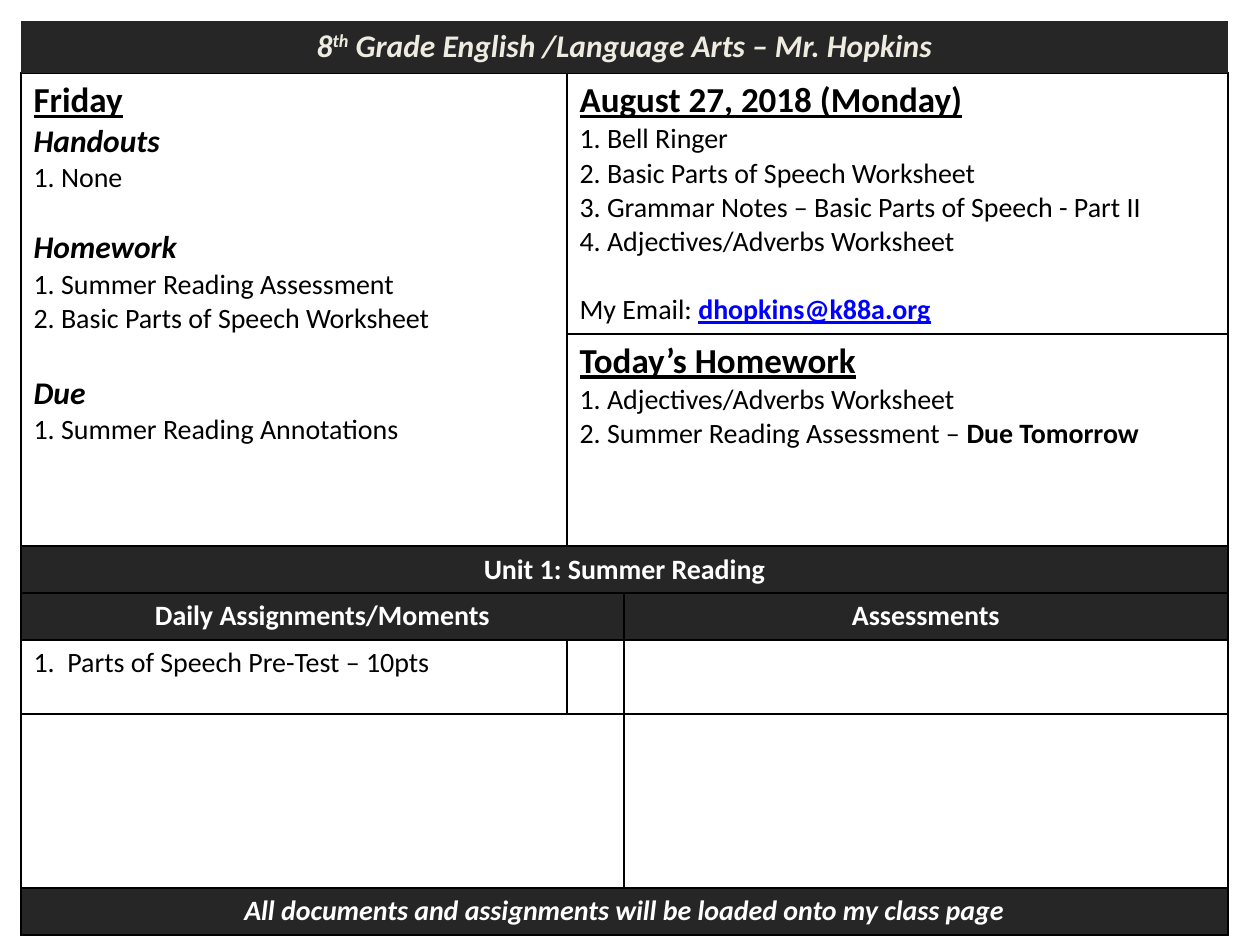
"""Build a class agenda slide from three stacked tables."""
import pptx
import pptx.dml.color
import pptx.enum.text
import pptx.oxml
import pptx.oxml.ns
import pptx.util

PIXEL = 914400 / 126
LEFT = 21

THEME = {
    "font": "Calibri",
    "colors": {"ink": "000000", "band": "262626", "cream": "EEECE1", "white": "FFFFFF", "link": "0000FF"},
    "styles": {
        "title": {"size": 18, "color": "cream", "bold": True, "italic": True, "centered": True},
        "heading": {"size": 20, "bold": True, "underline": True},
        "subheading": {"size": 18, "bold": True, "italic": True},
        "item": {"size": 16},
        "strong": {"size": 16, "bold": True},
        "link": {"size": 16, "color": "link", "bold": True, "underline": True},
        "band": {"size": 16, "color": "white", "bold": True, "centered": True},
        "footer": {"size": 16, "color": "white", "bold": True, "italic": True, "centered": True},
        "superscript": {"size": 18, "color": "cream", "bold": True, "italic": True, "baseline": 30000},
    },
}

FRIDAY = [
    ("heading", "Friday"),
    ("subheading", "Handouts"),
    ("item", "1. None"),
    ("subheading", "Homework", 19.5),
    ("item", "1. Summer Reading Assessment"),
    ("item", "2. Basic Parts of Speech Worksheet"),
    ("subheading", "Due", 22),
    ("item", "1. Summer Reading Annotations"),
]
MONDAY = [
    ("heading", "August 27, 2018 (Monday)"),
    ("item", "1. Bell Ringer"),
    ("item", "2. Basic Parts of Speech Worksheet"),
    ("item", "3. Grammar Notes – Basic Parts of Speech - Part II"),
    ("item", "4. Adjectives/Adverbs Worksheet"),
    ("item", [("item", "My Email: "), ("link", "dhopkins@k88a.org")], 19.5),
]
HOMEWORK = [
    ("heading", "Today’s Homework"),
    ("item", "1. Adjectives/Adverbs Worksheet"),
    ("item", [("item", "2. Summer Reading Assessment – "), ("strong", "Due Tomorrow")]),
]
TITLE = [("title", [("title", "8"), ("superscript", "th"),
                    ("title", " Grade English /Language Arts – Mr. Hopkins")])]

TABLES = [
    {"top": 73, "columns": [546, 661], "rows": [230, 230], "border": True,
     "merges": [((0, 0), (1, 0))], "bands": [], "hanging": {0: 48, 1: 73},
     "cells": {(0, 0): FRIDAY, (0, 1): MONDAY, (1, 1): HOMEWORK}},
    {"top": 21, "columns": [1207], "rows": [52], "border": False,
     "merges": [], "bands": [0], "hanging": {}, "cells": {(0, 0): TITLE}},
    {"top": 546, "columns": [603, 604], "rows": [47, 47, 248, 47], "border": True,
     "merges": [((0, 0), (0, 1)), ((3, 0), (3, 1))], "bands": [0, 1, 3], "hanging": {},
     "cells": {
         (0, 0): [("band", "Unit 1: Summer Reading")],
         (1, 0): [("band", "Daily Assignments/Moments")],
         (1, 1): [("band", "Assessments")],
         (2, 0): [("item", "1.  Parts of Speech Pre-Test – 10pts")],
         (3, 0): [("footer", "All documents and assignments will be loaded onto my class page")],
     }},
]


def emu(pixels):
    return pptx.util.Emu(round(pixels * PIXEL))


def color(name):
    return pptx.dml.color.RGBColor.from_string(THEME["colors"][name])


def add_run(paragraph, style_name, text):
    style = THEME["styles"][style_name]
    run = paragraph.add_run()
    run.text = text
    formats = {"name": THEME["font"], "size": pptx.util.Pt(style["size"])}
    formats.update({key: style.get(key, False) for key in ("bold", "italic", "underline")})
    for key, value in formats.items():
        setattr(run.font, key, value)
    run.font.color.rgb = color(style.get("color", "ink"))
    if "baseline" in style:
        run.font._element.set("baseline", str(style["baseline"]))


def write_cell(cell, paragraphs, hanging):
    for index, (style_name, content, *gap) in enumerate(paragraphs):
        frame = cell.text_frame
        paragraph = frame.add_paragraph() if index else frame.paragraphs[0]
        if THEME["styles"][style_name].get("centered"):
            paragraph.alignment = pptx.enum.text.PP_ALIGN.CENTER
        if gap:
            paragraph.space_before = pptx.util.Pt(gap[0])
        if hanging and style_name == "item":
            properties = paragraph._p.get_or_add_pPr()
            properties.set("marL", str(emu(hanging)))
            properties.set("indent", str(-emu(hanging)))
        runs = [(style_name, content)] if isinstance(content, str) else content
        for run_style, text in runs:
            add_run(paragraph, run_style, text)


def set_borders(cell, visible):
    paint = f'<a:solidFill><a:srgbClr val="{THEME["colors"]["ink"]}"/></a:solidFill>' if visible else "<a:noFill/>"
    for index, side in enumerate(("lnL", "lnR", "lnT", "lnB")):
        line = pptx.oxml.parse_xml(
            f'<a:{side} {pptx.oxml.ns.nsdecls("a")} w="12700">{paint}</a:{side}>')
        cell._tc.get_or_add_tcPr().insert(index, line)


def add_agenda_table(slide, content):
    columns, rows = content["columns"], content["rows"]
    table = slide.shapes.add_table(
        len(rows), len(columns), emu(LEFT), emu(content["top"]), emu(sum(columns)), emu(sum(rows))).table
    table.first_row = table.horz_banding = False
    for column, width in zip(table.columns, columns):
        column.width = emu(width)
    for row, height in zip(table.rows, rows):
        row.height = emu(height)
    for start, end in content["merges"]:
        table.cell(*start).merge(table.cell(*end))
    for row in range(len(rows)):
        for column in range(len(columns)):
            cell = table.cell(row, column)
            if row in content["bands"]:
                cell.fill.solid()
                cell.fill.fore_color.rgb = color("band")
            else:
                cell.fill.background()
            set_borders(cell, content["border"])
            write_cell(cell, content["cells"].get((row, column), []), content["hanging"].get(column))


def main():
    presentation = pptx.Presentation()
    presentation.slide_width = emu(1260)
    presentation.slide_height = emu(945)
    slide = presentation.slides.add_slide(presentation.slide_layouts[6])
    for content in TABLES:
        add_agenda_table(slide, content)
    presentation.save("out.pptx")


if __name__ == "__main__":
    main()
